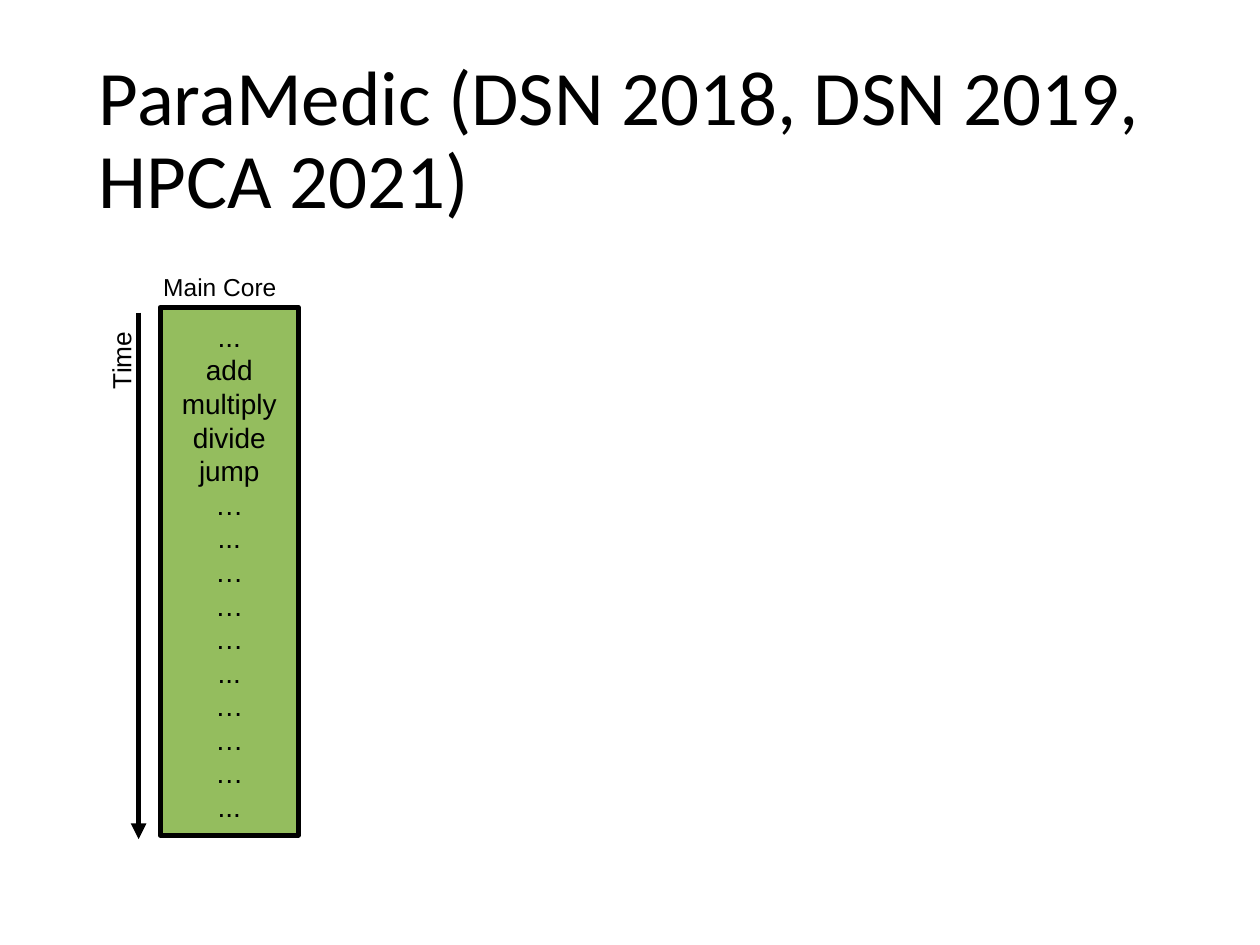
"""Build the ParaMedic slide with a main core's instruction timeline."""
from lxml.etree import SubElement
from pptx import Presentation
from pptx.dml.color import RGBColor
from pptx.enum.shapes import MSO_CONNECTOR, MSO_SHAPE
from pptx.enum.text import MSO_ANCHOR as Anchor, PP_ALIGN as Align
from pptx.oxml.ns import qn
from pptx.util import Pt

COLOURS = {"ink": "000000", "core": "94BD5E"}
INSTRUCTIONS = ["...", "add", "multiply", "divide", "jump"]
ELLIPSES = ["…", "...", "…", "…", "…", "...", "…", "…", "…", "..."]


def colour(name):
    return RGBColor.from_string(COLOURS[name])


def write(shape, text, size, font="Arial", align=Align.LEFT, anchor=Anchor.TOP, spacing=None):
    frame = shape.text_frame
    frame.text = text
    frame.word_wrap = True
    frame.vertical_anchor = anchor
    for paragraph in frame.paragraphs:
        paragraph.alignment = align
        paragraph.line_spacing = spacing
        for run in paragraph.runs:
            run.font.name = font
            run.font.size = Pt(size)
            run.font.color.rgb = colour("ink")


presentation = Presentation()
presentation.slide_width, presentation.slide_height = Pt(720), Pt(540)
slide = presentation.slides.add_slide(presentation.slide_layouts[6])
shapes = slide.shapes

title = shapes.add_textbox(Pt(49.5), Pt(28.75), Pt(621), Pt(104.4))
write(title, "ParaMedic (DSN 2018, DSN 2019, HPCA 2021)", 44, "Calibri",
      anchor=Anchor.MIDDLE, spacing=0.9)

core = shapes.add_shape(MSO_SHAPE.RECTANGLE, Pt(91.5), Pt(175.6), Pt(79), Pt(301.7))
core.shadow.inherit = False
core.fill.solid()
core.fill.fore_color.rgb = colour("core")
core.line.color.rgb = colour("ink")
core.line.width = Pt(2.83)
write(core, "\n".join(INSTRUCTIONS + ELLIPSES), 16,
      align=Align.CENTER, anchor=Anchor.MIDDLE, spacing=Pt(19.2))
core.text_frame.word_wrap = False

core_label = shapes.add_textbox(Pt(71.3), Pt(152), Pt(108.7), Pt(23))
write(core_label, "Main Core", 14, align=Align.CENTER)

time_arrow = shapes.add_connector(MSO_CONNECTOR.STRAIGHT, Pt(79.2), Pt(178.6), Pt(79.2), Pt(479.5))
time_arrow.line.color.rgb = colour("ink")
time_arrow.line.width = Pt(3)
SubElement(time_arrow.line._get_or_add_ln(), qn("a:tailEnd"), type="triangle")
SubElement(time_arrow._element.spPr, qn("a:effectLst"))

time_label = shapes.add_textbox(Pt(38.9), Pt(182.2), Pt(64.8), Pt(29.5))
time_label.rotation = 270
write(time_label, "Time", 15)

presentation.save("out.pptx")
